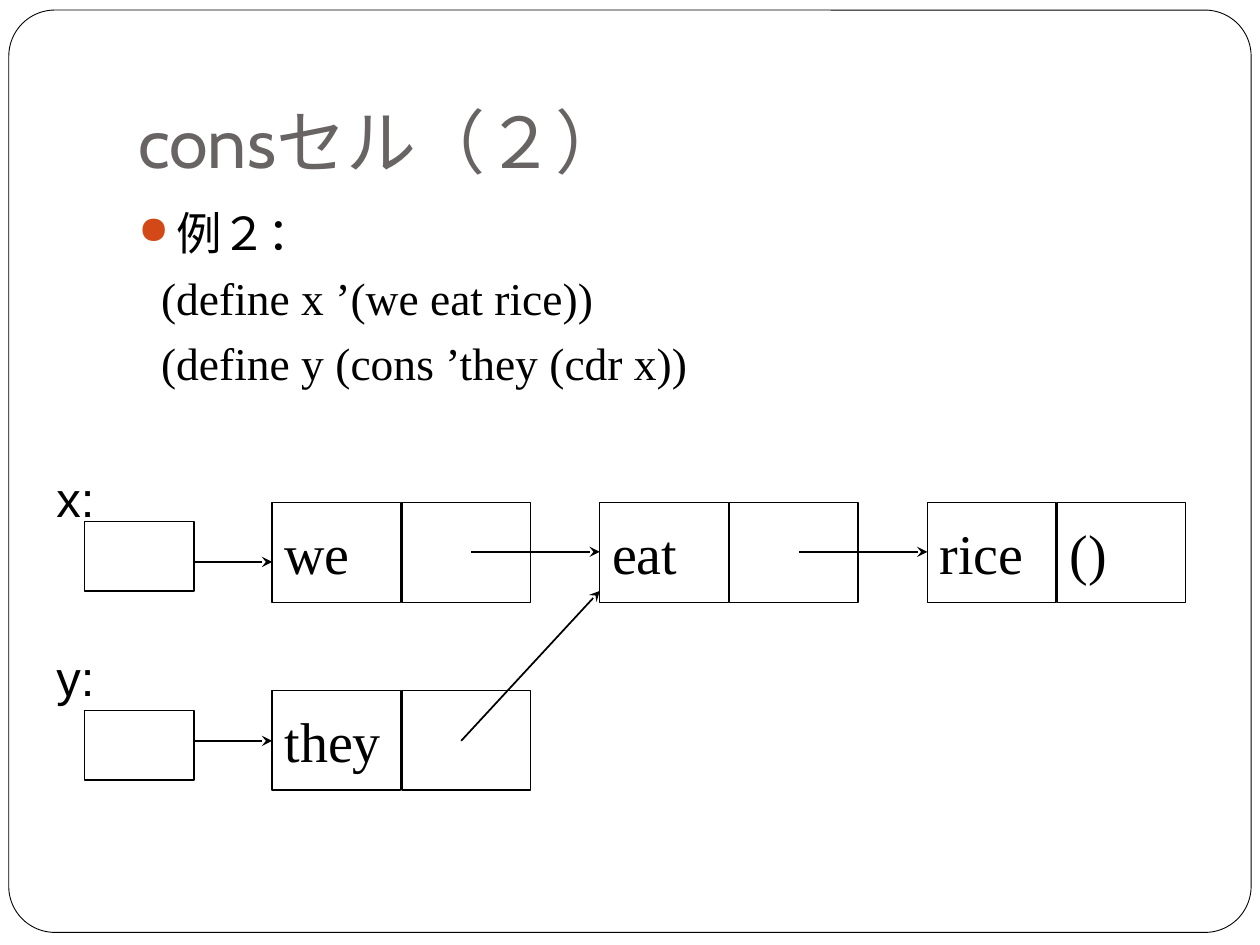
from lxml.etree import SubElement
from pptx import Presentation
from pptx.dml.color import RGBColor
from pptx.enum.shapes import MSO_CONNECTOR, MSO_SHAPE
from pptx.enum.text import MSO_ANCHOR, PP_ALIGN
from pptx.oxml.ns import qn
from pptx.util import Inches, Pt

COLORS = {"paper": "FFFFFF", "ink": "000000", "title": "696464", "bullet": "D34817"}
SERIF = "Times New Roman"
TITLE = "consセル（２）"
EXAMPLE = [
    ("例２：", True),
    ("(define x ’(we eat rice))", False),
    ("(define y (cons ’they (cdr x))", False),
]
CONS_CELLS = [
    (0, 3.99, "we", ""),
    (1, 3.99, "eat", ""),
    (2, 3.99, "rice", "()"),
    (0, 5.48, "they", ""),
]
VARIABLES = [("x:", 3.67, 4.14), ("y:", 5.09, 5.64)]
ARROWS = [
    ((3.74, 4.38), (4.76, 4.38)),
    ((6.34, 4.38), (7.36, 4.38)),
    ((1.53, 4.46), (2.16, 4.46)),
    ((1.53, 5.88), (2.16, 5.88)),
    ((3.66, 5.88), (4.76, 4.69)),
]
CELL_LEFT, CELL_STEP, HALF_STEP = 2.16, 2.6, 1.03
CELL_SIZE = (1.02, 0.79)
VARIABLE_SIZE = (0.87, 0.55)


def color(name):
    return RGBColor.from_string(COLORS[name])


def add_run(paragraph, text, size, font, color_name="ink"):
    run = paragraph.add_run()
    run.text = text
    run.font.size = Pt(size)
    run.font.name = font
    run.font.color.rgb = color(color_name)


def add_text_frame(slide, left, top, width, height, anchor=MSO_ANCHOR.TOP):
    box = slide.shapes.add_textbox(*map(Inches, (left, top, width, height)))
    frame = box.text_frame
    frame.word_wrap = True
    frame.vertical_anchor = anchor
    return frame


def add_box(slide, kind, left, top, size, line_width, text=""):
    shape = slide.shapes.add_shape(kind, *map(Inches, (left, top, *size)))
    shape.shadow.inherit = False
    shape.fill.background()
    shape.line.color.rgb = color("ink")
    shape.line.width = Pt(line_width)
    if text:
        frame = shape.text_frame
        frame.word_wrap = False
        frame.vertical_anchor = MSO_ANCHOR.MIDDLE
        paragraph = frame.paragraphs[0]
        paragraph.alignment = PP_ALIGN.LEFT
        add_run(paragraph, text, 32, SERIF)
    return shape


def add_arrow(slide, start, end):
    connector = slide.shapes.add_connector(
        MSO_CONNECTOR.STRAIGHT, *map(Inches, (*start, *end)))
    connector.line.color.rgb = color("ink")
    connector.line.width = Pt(1)
    SubElement(connector.line._get_or_add_ln(), qn("a:tailEnd"), type="stealth")
    SubElement(connector._element.spPr, qn("a:effectLst"))


def set_indent(paragraph, bulleted):
    properties = paragraph._p.get_or_add_pPr()
    properties.set("marL", str(Inches(0.3 if bulleted else 0.18)))
    properties.set("indent", str(Inches(-0.3 if bulleted else 0)))
    if bulleted:
        bullet_color = SubElement(properties, qn("a:buClr"))
        SubElement(bullet_color, qn("a:srgbClr"), val=COLORS["bullet"])
        SubElement(properties, qn("a:buSzPct"), val="85000")
        SubElement(properties, qn("a:buChar"), char="●")


def main():
    presentation = Presentation()
    presentation.slide_width, presentation.slide_height = Inches(10), Inches(7.5)
    slide = presentation.slides.add_slide(presentation.slide_layouts[6])

    border = add_box(slide, MSO_SHAPE.ROUNDED_RECTANGLE, 0.07, 0.08, (9.86, 7.32), 0.5)
    border.adjustments[0] = 0.05
    border.fill.solid()
    border.fill.fore_color.rgb = color("paper")

    title = add_text_frame(slide, 1, 0.3, 8.5, 1.25, MSO_ANCHOR.BOTTOM)
    title.margin_bottom = Inches(0.1)
    add_run(title.paragraphs[0], TITLE, 40, "Cabin", "title")

    body = add_text_frame(slide, 1, 1.58, 8.5, 5)
    for index, (text, bulleted) in enumerate(EXAMPLE):
        paragraph = body.add_paragraph() if index else body.paragraphs[0]
        paragraph.space_before = Pt(5.8)
        set_indent(paragraph, bulleted)
        add_run(paragraph, text, 26, SERIF)

    for column, top, *halves in CONS_CELLS:
        for half, text in enumerate(halves):
            left = CELL_LEFT + column * CELL_STEP + half * HALF_STEP
            add_box(slide, MSO_SHAPE.FLOWCHART_PROCESS, left, top, CELL_SIZE, 0.75, text)

    for name, label_top, box_top in VARIABLES:
        add_box(slide, MSO_SHAPE.FLOWCHART_PROCESS, 0.67, box_top, VARIABLE_SIZE, 0.75)
        label = add_text_frame(slide, 0.35, label_top, 0.94, 0.57)
        add_run(label.paragraphs[0], name, 28, "Arial")

    for start, end in ARROWS:
        add_arrow(slide, start, end)

    presentation.save("out.pptx")


if __name__ == "__main__":
    main()
